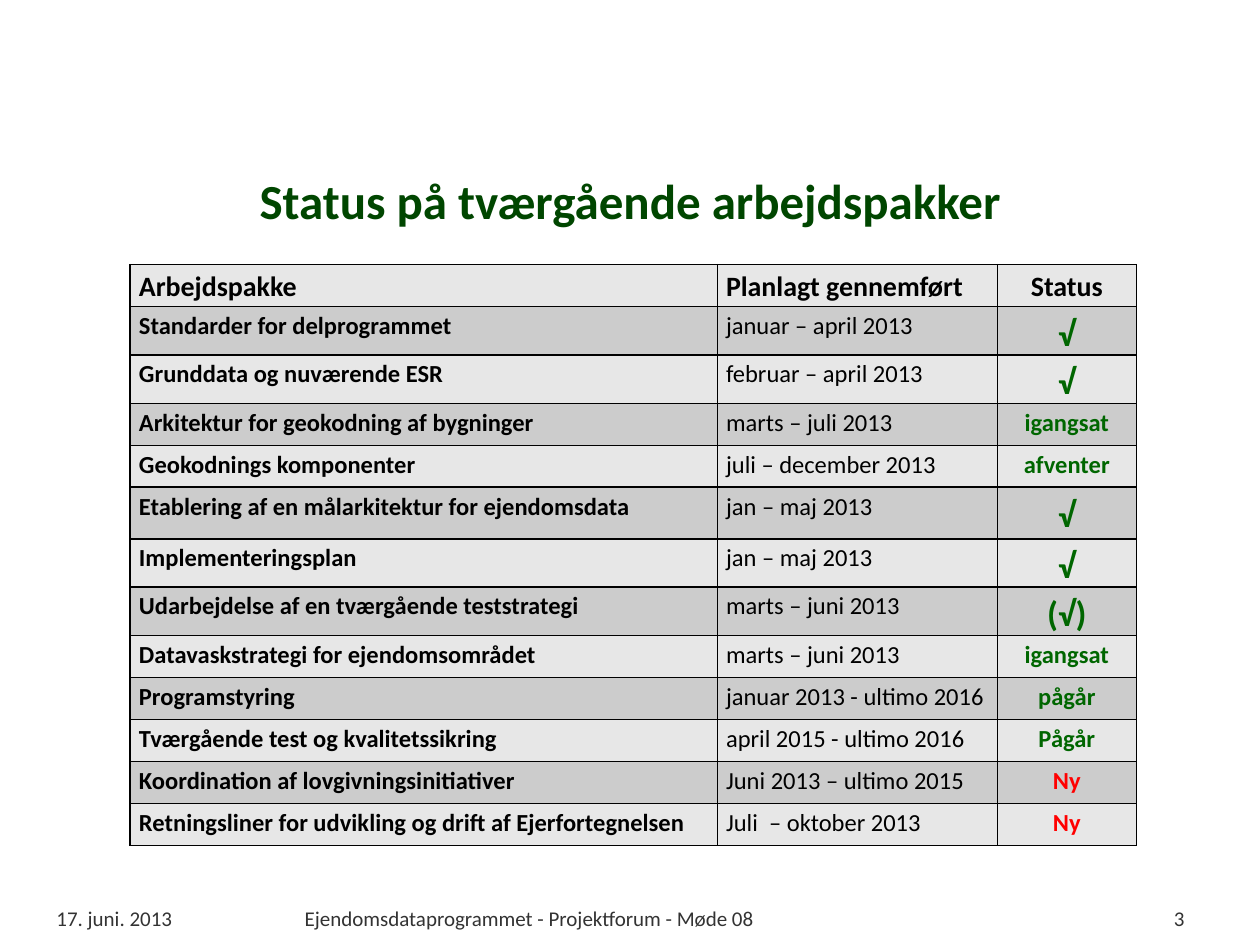
from dataclasses import dataclass

from lxml.etree import SubElement
from pptx import Presentation
from pptx.dml.color import RGBColor as RGB
from pptx.enum.text import MSO_ANCHOR as Anchor, MSO_AUTO_SIZE as AutoSize, PP_ALIGN as Align
from pptx.oxml.ns import qn
from pptx.util import Pt


@dataclass(frozen=True)
class Theme:
    font: str = "Calibri"
    title: str = "004600"
    text: str = "000000"
    footer: str = "333333"
    done: str = "006600"
    new: str = "FF0000"
    border: str = "000000"
    bands: tuple = ("E7E7E7", "CCCCCC")
    title_size: float = 28
    header_size: float = 16
    body_size: float = 14
    check_size: float = 20
    footer_size: float = 12


@dataclass(frozen=True)
class Package:
    name: str
    planned: str
    status: str
    height: float = 24


@dataclass(frozen=True)
class Footer:
    text: str
    left: float
    width: float
    align: Align = Align.LEFT


THEME = Theme()
COLUMN_WIDTHS = (335.5, 160, 79.5)
COLUMN_ALIGNS = (Align.LEFT, Align.LEFT, Align.CENTER)
HEADER = Package("Arbejdspakke", "Planlagt gennemført", "Status")
PACKAGES = [
    Package("Standarder for delprogrammet", "januar – april 2013", "√"),
    Package("Grunddata og nuværende ESR", "februar – april 2013", "√"),
    Package("Arkitektur for geokodning af bygninger", "marts – juli 2013", "igangsat"),
    Package("Geokodnings komponenter", "juli – december 2013", "afventer"),
    Package("Etablering af en målarkitektur for ejendomsdata", "jan – maj 2013", "√", 29.5),
    Package("Implementeringsplan", "jan – maj 2013", "√"),
    Package("Udarbejdelse af en tværgående teststrategi", "marts – juni 2013", "(√)"),
    Package("Datavaskstrategi for ejendomsområdet", "marts – juni 2013", "igangsat"),
    Package("Programstyring", "januar 2013 - ultimo 2016", "pågår"),
    Package("Tværgående test og kvalitetssikring", "april 2015 - ultimo 2016", "Pågår"),
    Package("Koordination af lovgivningsinitiativer", "Juni 2013 – ultimo 2015", "Ny"),
    Package("Retningsliner for udvikling og drift af Ejerfortegnelsen", "Juli  – oktober 2013", "Ny"),
]
FOOTERS = [
    Footer("17. juni. 2013", 25.2, 170.6),
    Footer("Ejendomsdataprogrammet - Projektforum - Møde 08", 167, 447.8),
    Footer("3", 632.2, 51.8, Align.RIGHT),
]


def write(tf, text: str, size: float, color: str, align: Align, bold: bool = False):
    p = tf.paragraphs[0]
    p.text, p.alignment = text, align
    p.font.name, p.font.size, p.font.bold = THEME.font, Pt(size), bold
    p.font.color.rgb = RGB.from_string(color)
    return p


def add_borders(cell) -> None:
    tc_pr = cell._tc.get_or_add_tcPr()
    for index, side in enumerate(("lnL", "lnR", "lnT", "lnB")):
        line = SubElement(tc_pr, qn(f"a:{side}"), w=str(Pt(1)))
        fill = SubElement(line, qn("a:solidFill"))
        SubElement(fill, qn("a:srgbClr"), val=THEME.border)
        tc_pr.insert(index, line)  # borders come before the fill


def add_title(slide) -> None:
    sp = slide.shapes.title
    sp.left, sp.top, sp.width, sp.height = Pt(36), Pt(91.4), Pt(648), Pt(45.4)
    tf = sp.text_frame
    tf.auto_size, tf.vertical_anchor = AutoSize.NONE, Anchor.MIDDLE
    write(tf, "Status på tværgående arbejdspakker", THEME.title_size, THEME.title, Align.CENTER, True)


def cell_style(row: int, column: int, text: str) -> tuple[float, str, bool]:
    """Size, colour and weight of one table cell."""
    if row == 0:
        return THEME.header_size, THEME.text, True
    if column < 2:
        return THEME.body_size, THEME.text, column == 0
    size = THEME.check_size if "√" in text else THEME.body_size
    return size, THEME.new if text == "Ny" else THEME.done, True


def add_status_table(slide) -> None:
    rows = [HEADER, *PACKAGES]
    height = sum(package.height for package in rows)
    table = slide.shapes.add_table(
        len(rows), len(COLUMN_WIDTHS), Pt(74.4), Pt(151.2), Pt(sum(COLUMN_WIDTHS)), Pt(height)
    ).table
    table.first_row = table.horz_banding = False
    for column, width in zip(table.columns, COLUMN_WIDTHS):
        column.width = Pt(width)
    for r, package in enumerate(rows):
        table.rows[r].height = Pt(package.height)
        for c, text in enumerate((package.name, package.planned, package.status)):
            cell = table.cell(r, c)
            cell.margin_left = cell.margin_right = Pt(5)
            cell.margin_top = cell.margin_bottom = Pt(0)
            cell.fill.solid()
            cell.fill.fore_color.rgb = RGB.from_string(THEME.bands[r % 2])
            size, color, bold = cell_style(r, c, text)
            p = write(cell.text_frame, text, size, color, COLUMN_ALIGNS[c], bold)
            p.line_spacing = 1.15
            add_borders(cell)


def add_footer(slide, footer: Footer) -> None:
    sp = slide.shapes.add_textbox(Pt(footer.left), Pt(514), Pt(footer.width), Pt(11.5))
    sp.text_frame.word_wrap = True
    write(sp.text_frame, footer.text, THEME.footer_size, THEME.footer, footer.align)


def main() -> None:
    prs = Presentation()
    prs.slide_width, prs.slide_height = Pt(720), Pt(540)
    slide = prs.slides.add_slide(prs.slide_layouts[5])  # title only
    add_title(slide)
    for footer in FOOTERS:
        add_footer(slide, footer)
    add_status_table(slide)
    prs.save("out.pptx")


if __name__ == "__main__":
    main()
